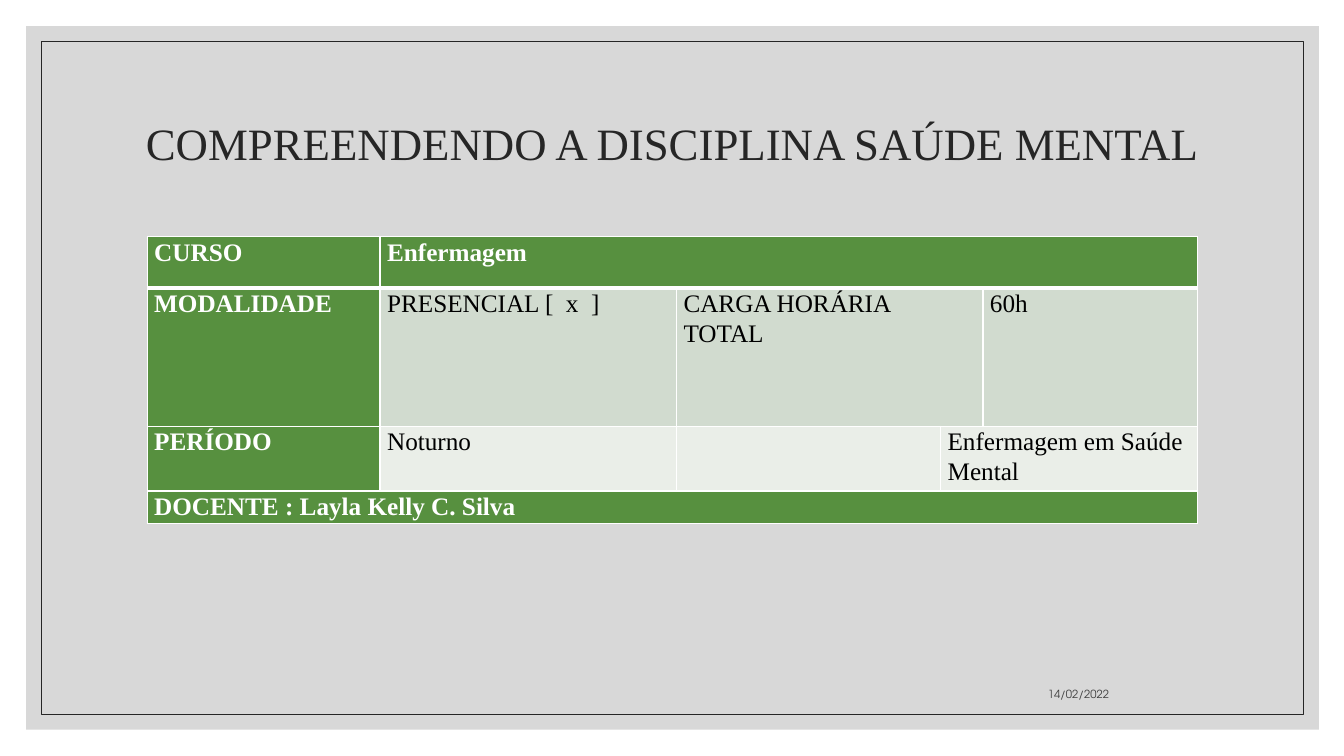
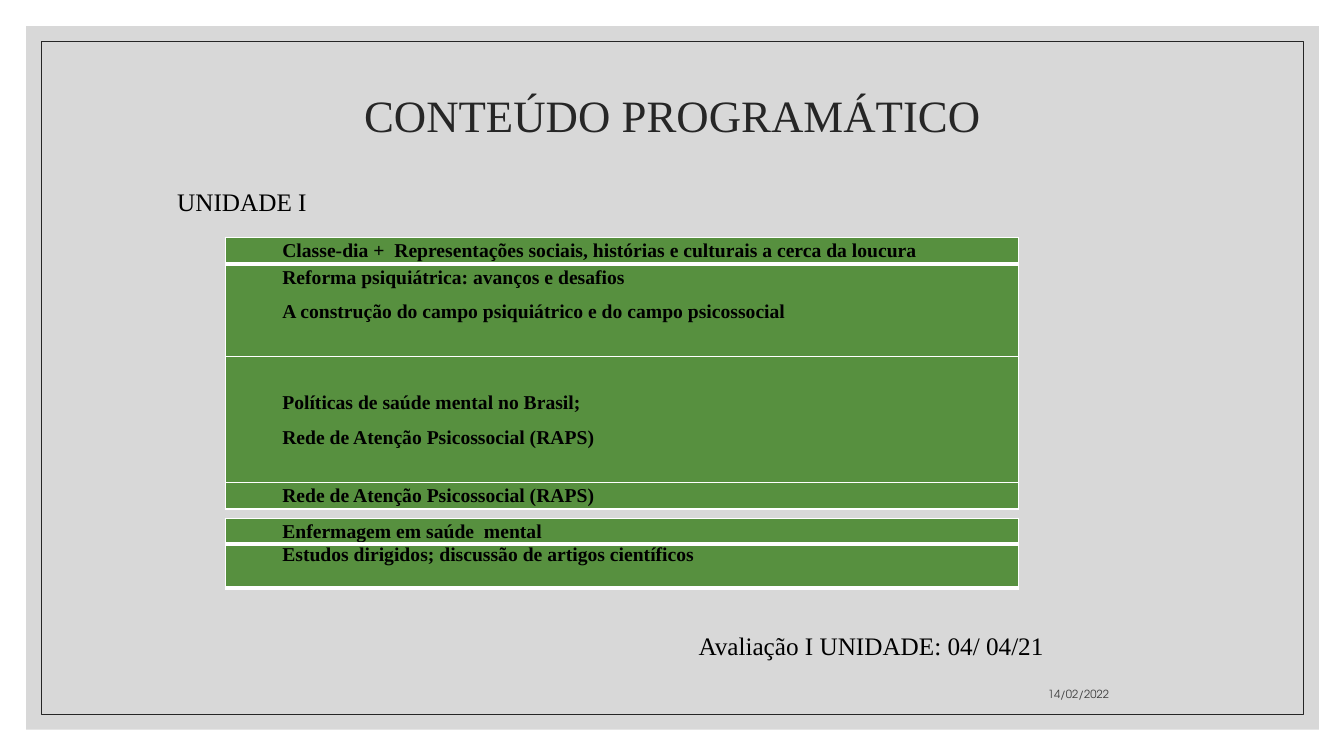
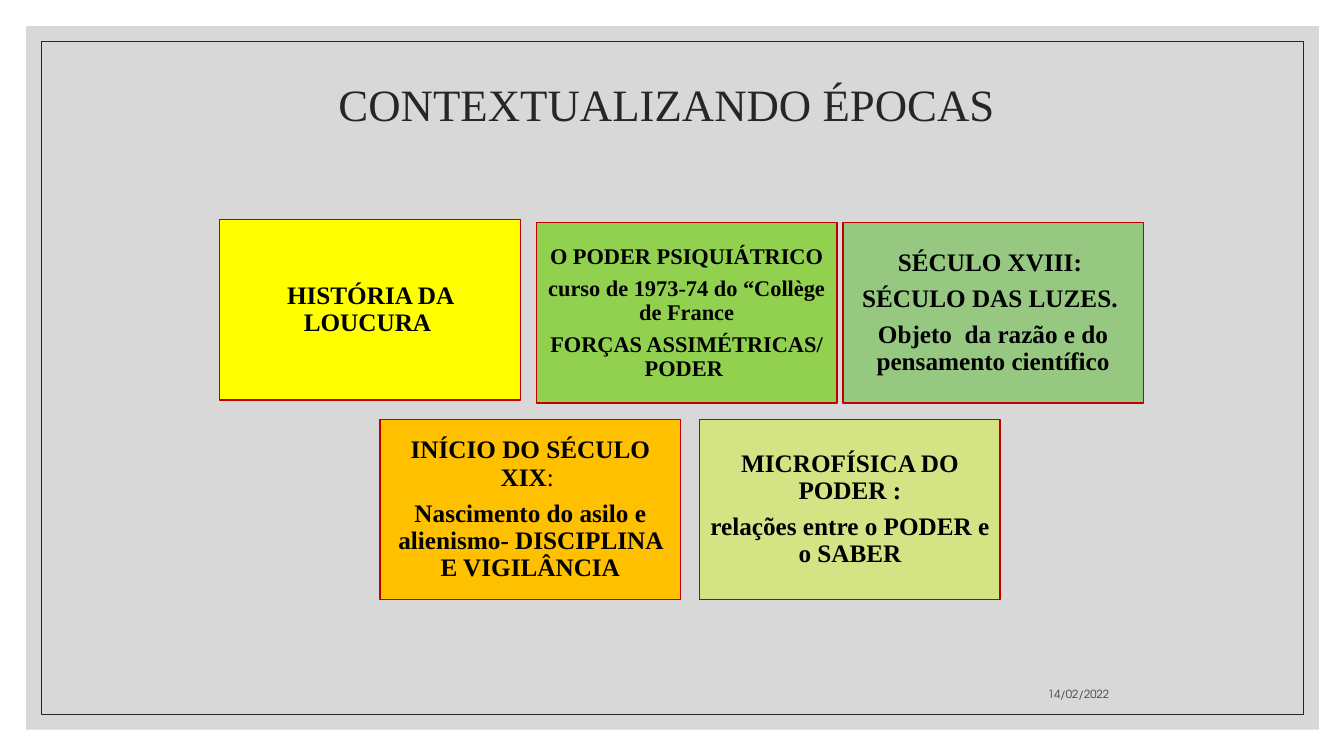
import pptx
import pptx.dml.color
import pptx.enum.shapes
import pptx.enum.text
import pptx.oxml
import pptx.oxml.ns
import pptx.util

Inches = pptx.util.Inches
Pt = pptx.util.Pt
ALIGN = pptx.enum.text.PP_ALIGN
ANCHOR = pptx.enum.text.MSO_ANCHOR

COLORS = {
    "band": "D8D8D8", "ink": "262626", "date": "404040", "black": "000000",
    "white": "FFFFFF", "green": "57903F", "sage": "D1DBCF", "mist": "EAEEE8",
    "red": "C00000", "yellow": "FFFF00", "lime": "92D050", "leaf": "96C881",
    "orange": "FFC000", "pistachio": "D4E485",
}
CELL_STYLES = {
    "head": ("green", "white", True),
    "topic": ("green", "black", True),
    "sage": ("sage", "black", False),
    "mist": ("mist", "black", False),
}
SERIF = "Times New Roman"
SANS = "TeX Gyre Adventor"


def color(name):
    return pptx.dml.color.RGBColor.from_string(COLORS[name])


class Lesson:
    """Holds the deck's style and current page and draws each kind of element."""

    def __init__(self):
        self.deck = pptx.Presentation()
        self.deck.slide_width = Inches(13.33)
        self.deck.slide_height = Inches(7.5)
        self.page = None

    def new_page(self, title, top=0.7, height=1.5):
        self.page = self.deck.slides.add_slide(self.deck.slide_layouts[6])
        self.rectangle(0.26, 0.26, 12.82, 6.98, fill="band")
        self.rectangle(0.41, 0.41, 12.52, 6.68, line="ink", weight=0.5)
        self.text(1.17, top, 11, height, title, size=32, ink="ink",
                  align=ALIGN.CENTER, anchor=ANCHOR.MIDDLE, spacing=0.9)
        self.text(7.94, 6.6, 3.16, 0.4, "14/02/2022", size=8, ink="date",
                  font=SANS, align=ALIGN.RIGHT, anchor=ANCHOR.BOTTOM)

    def rectangle(self, left, top, width, height, fill=None, line=None, weight=1):
        box = self.page.shapes.add_shape(
            pptx.enum.shapes.MSO_SHAPE.RECTANGLE,
            Inches(left), Inches(top), Inches(width), Inches(height))
        box.shadow.inherit = False
        if fill:
            box.fill.solid()
            box.fill.fore_color.rgb = color(fill)
        else:
            box.fill.background()
        if line:
            box.line.color.rgb = color(line)
            box.line.width = Pt(weight)
        else:
            box.line.fill.background()
        return box

    def set_paragraphs(self, frame, paras, size=18, ink="black", font=SERIF, bold=False,
                       align=ALIGN.LEFT, spacing=1.0, after=0, indent=0):
        for index, content in enumerate(paras):
            para = frame.add_paragraph() if index else frame.paragraphs[0]
            para.alignment = align
            para.line_spacing = spacing
            para.space_after = Pt(after)
            if indent:
                para._p.get_or_add_pPr().set("marL", str(Inches(indent)))
            para.font.name = font
            para.font.size = Pt(size)
            para.font.color.rgb = color(ink)
            if isinstance(content, str):
                para.font.bold = bold
                content = [(content, None)]
            for words, weight in content:
                span = para.add_run()
                span.text = words
                if weight is not None:
                    span.font.bold = weight

    def text(self, left, top, width, height, words, anchor=ANCHOR.TOP, **style):
        box = self.page.shapes.add_textbox(
            Inches(left), Inches(top), Inches(width), Inches(height))
        box.text_frame.word_wrap = True
        box.text_frame.vertical_anchor = anchor
        self.set_paragraphs(box.text_frame, [words], **style)

    def card(self, left, top, fill, paras, size=18):
        box = self.rectangle(left, top, 2.98, 1.79, fill=fill, line="red")
        frame = box.text_frame
        frame.word_wrap = True
        frame.vertical_anchor = ANCHOR.MIDDLE
        frame.margin_left = frame.margin_right = Inches(0.07)
        frame.margin_top = frame.margin_bottom = Inches(0.07)
        self.set_paragraphs(frame, paras, size=size, bold=True, align=ALIGN.CENTER,
                            spacing=0.9, after=size * 0.35)

    def borders(self, cell, top, bottom):
        properties = cell._tc.get_or_add_tcPr()
        weights = {"lnL": 1, "lnR": 1, "lnT": top, "lnB": bottom}
        for index, (side, weight) in enumerate(weights.items()):
            properties.insert(index, pptx.oxml.parse_xml(
                f'<a:{side} {pptx.oxml.ns.nsdecls("a")} w="{Pt(weight)}"><a:solidFill>'
                f'<a:srgbClr val="{COLORS["white"]}"/></a:solidFill></a:{side}>'))

    def table(self, left, top, widths, heights, rows, inset=0.06, pads=None, **style):
        table = self.page.shapes.add_table(
            len(heights), len(widths), Inches(left), Inches(top),
            Inches(sum(widths)), Inches(sum(heights))).table
        table.first_row = table.horz_banding = False
        for column, width in zip(table.columns, widths):
            column.width = Inches(width)
        for number, (height, entries) in enumerate(zip(heights, rows)):
            table.rows[number].height = Inches(height)
            position = 0
            for paras, kind, reach in entries:
                fill, ink, bold = CELL_STYLES[kind]
                for offset in range(reach):
                    cell = table.cell(number, position + offset)
                    cell.margin_left = cell.margin_right = Inches(inset)
                    cell.margin_top = Inches(pads[number] if pads else 0)
                    cell.margin_bottom = 0
                    cell.fill.solid()
                    cell.fill.fore_color.rgb = color(fill)
                    self.borders(cell, 3 if number == 1 else 1, 1 if number else 3)
                first = table.cell(number, position)
                if reach > 1:
                    first.merge(table.cell(number, position + reach - 1))
                self.set_paragraphs(first.text_frame, paras, ink=ink, bold=bold,
                                    spacing=1.07, **style)
                position += reach

    def topics(self, top, heights, groups, pads):
        self.table(2.24, top, [7.86], heights,
                   [[(paras, "topic", 1)] for paras in groups],
                   pads=pads, size=14, after=8, indent=0.5)


def main():
    lesson = Lesson()

    lesson.new_page("COMPREENDENDO A DISCIPLINA SAÚDE MENTAL")
    lesson.table(1.46, 2.35, [2.31, 2.94, 2.62, 0.42, 2.13], [0.51, 1.37, 0.58, 0.3], [
        [(["CURSO"], "head", 1), (["Enfermagem"], "head", 4)],
        [(["MODALIDADE"], "head", 1), (["PRESENCIAL [  x  ]"], "sage", 1),
         (["CARGA HORÁRIA TOTAL"], "sage", 2), (["60h"], "sage", 1)],
        [(["PERÍODO"], "head", 1), (["Noturno"], "mist", 1), ([], "mist", 1),
         (["Enfermagem em Saúde Mental"], "mist", 2)],
        [(["DOCENTE : Layla Kelly C. Silva"], "head", 5)],
    ], inset=0.07, after=4)

    lesson.new_page("CONTEÚDO PROGRAMÁTICO", top=0.42)
    lesson.text(1.66, 1.8, 5, 0.4, "UNIDADE I")
    lesson.topics(2.36, [0.26, 0.92, 1.25, 0.26], [
        ["Classe-dia +  Representações sociais, histórias e culturais a cerca da loucura"],
        ["Reforma psiquiátrica: avanços e desafios",
         "A construção do campo psiquiátrico e do campo psicossocial"],
        ["Políticas de saúde mental no Brasil;", "Rede de Atenção Psicossocial (RAPS)"],
        ["Rede de Atenção Psicossocial (RAPS)"],
    ], pads=[0.01, 0.01, 0.34, 0.01])
    lesson.topics(5.37, [0.46], [["Estudos dirigidos; discussão de artigos científicos"]], [0.01])
    lesson.topics(5.14, [0.26], [["Enfermagem em saúde  mental"]], [0.01])
    lesson.text(6.83, 6.2, 5.1, 0.4, "Avaliação I UNIDADE: 04/ 04/21")

    lesson.new_page("CONTEXTUALIZANDO ÉPOCAS ", height=0.73)
    lesson.card(2.18, 2.18, "yellow", ["HISTÓRIA DA LOUCURA "])
    lesson.card(5.32, 2.21, "lime", [
        "O PODER PSIQUIÁTRICO", "curso de 1973-74 do “Collège de France",
        "FORÇAS ASSIMÉTRICAS/ PODER "], size=16)
    lesson.card(8.36, 2.21, "leaf", [
        "SÉCULO XVIII: ", "SÉCULO DAS LUZES. ",
        "Objeto  da razão e do pensamento científico"])
    lesson.card(3.77, 4.16, "orange", [
        [("INÍCIO DO SÉCULO XIX", True), (": ", False)],
        "Nascimento do asilo e alienismo- DISCIPLINA E VIGILÂNCIA"])
    lesson.card(6.94, 4.16, "pistachio", [
        "MICROFÍSICA DO PODER :", "relações entre o PODER e o SABER"])

    lesson.deck.save("out.pptx")


if __name__ == "__main__":
    main()
